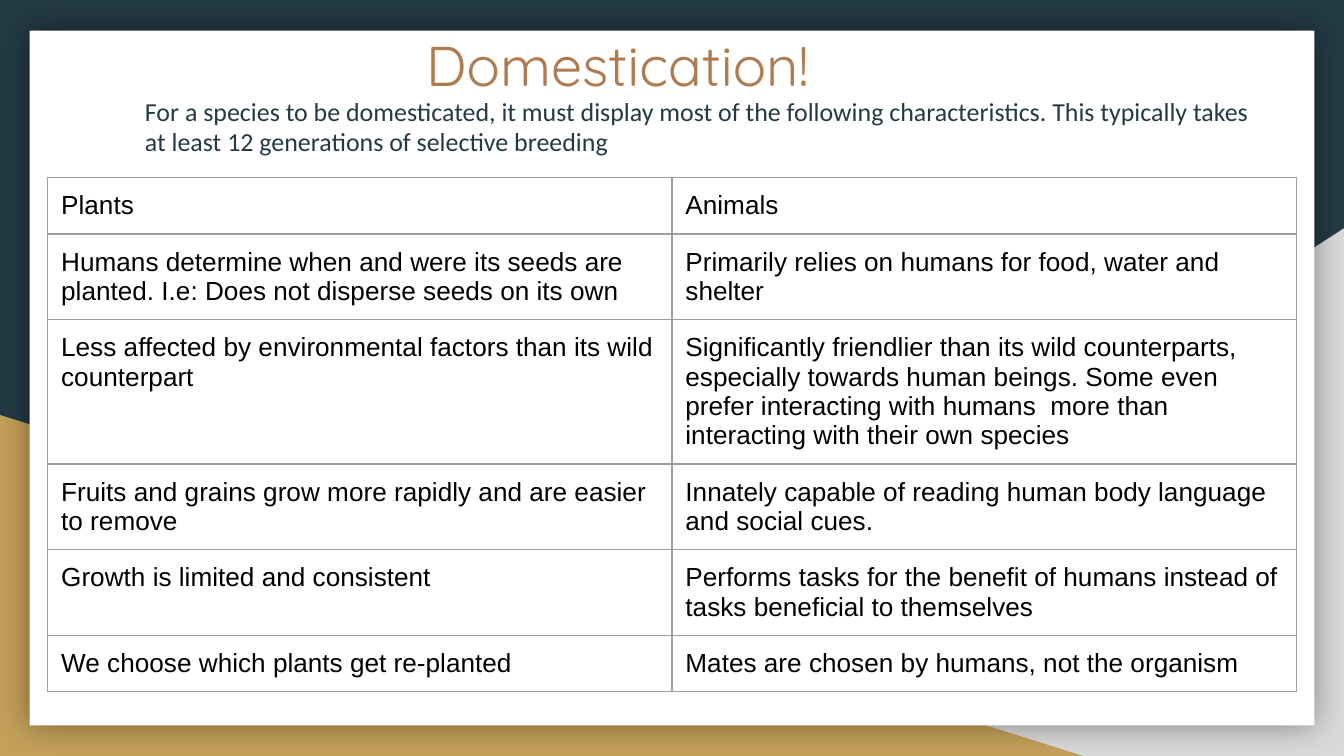
from dataclasses import dataclass

from lxml.etree import SubElement
from pptx import Presentation
from pptx.dml.color import RGBColor
from pptx.enum.shapes import MSO_SHAPE
from pptx.enum.text import MSO_ANCHOR, MSO_AUTO_SIZE, PP_ALIGN
from pptx.oxml.ns import qn
from pptx.util import Inches, Pt

COLORS = {
    "navy": "233A44",
    "gray": "D9D9D9",
    "gold": "C4A15A",
    "white": "FFFFFF",
    "copper": "AF7B51",
    "black": "000000",
    "border": "9E9E9E",
}
SLIDE_WIDTH, SLIDE_HEIGHT = Inches(10), Inches(5.625)
INSET = Inches(0.1)
LINE_HEIGHT = Inches(0.218)


@dataclass(frozen=True)
class Region:
    """Position and size in percent of the slide's width and height."""
    left: float
    top: float
    width: float
    height: float

    def lengths(self) -> tuple[int, int, int, int]:
        return (
            int(SLIDE_WIDTH * self.left / 100),
            int(SLIDE_HEIGHT * self.top / 100),
            int(SLIDE_WIDTH * self.width / 100),
            int(SLIDE_HEIGHT * self.height / 100),
        )


@dataclass(frozen=True)
class Panel:
    kind: MSO_SHAPE
    region: Region
    color: str
    flipped: bool = False
    shadowed: bool = False


@dataclass(frozen=True)
class TextStyle:
    font: str
    size: float
    color: str


@dataclass(frozen=True)
class TraitRow:
    plants: str
    animals: str
    lines: int


PANELS = [
    Panel(MSO_SHAPE.RIGHT_TRIANGLE, Region(39.2, 30.2, 60.8, 69.8), "gray", flipped=True),
    Panel(MSO_SHAPE.RIGHT_TRIANGLE, Region(0, 54.9, 80.6, 45.1), "gold"),
    Panel(MSO_SHAPE.RECTANGLE, Region(2.2, 4.05, 95.6, 91.9), "white", shadowed=True),
]
TITLE_REGION = Region(30.7, 2.3, 82.1, 18.5)
INTRO_REGION = Region(9.8, 11.2, 85.1, 14.76)
TABLE_REGION = Region(3.55, 23.5, 92.9, 68)

TITLE_STYLE = TextStyle("Quicksand", 30, "copper")
INTRO_STYLE = TextStyle("Calibri", 13.9, "navy")
CELL_STYLE = TextStyle("Arial", 14, "black")

INTRO = (
    "For a species to be domesticated, it must display most of the following "
    "characteristics. This typically takes at least 12 generations of selective breeding"
)
TRAITS = [
    TraitRow("Plants", "Animals", 1),
    TraitRow(
        "Humans determine when and were its seeds are planted. "
        "I.e: Does not disperse seeds on its own",
        "Primarily relies on humans for food, water and shelter", 2),
    TraitRow(
        "Less affected by environmental factors than its wild counterpart",
        "Significantly friendlier than its wild counterparts, especially towards human "
        "beings. Some even prefer interacting with humans  more than interacting with "
        "their own species", 4),
    TraitRow(
        "Fruits and grains grow more rapidly and are easier to remove",
        "Innately capable of reading human body language and social cues.", 2),
    TraitRow(
        "Growth is limited and consistent",
        "Performs tasks for the benefit of humans instead of tasks beneficial to themselves", 2),
    TraitRow(
        "We choose which plants get re-planted",
        "Mates are chosen by humans, not the organism", 1),
]


def rgb(name: str) -> RGBColor:
    return RGBColor.from_string(COLORS[name])


def add_span(para, text: str, style: TextStyle) -> None:
    span = para.add_run()
    span.text = text
    span.font.name = style.font
    span.font.size = Pt(style.size)
    span.font.color.rgb = rgb(style.color)


def set_insets(holder) -> None:
    """Give a text frame or table cell the same margin on all sides."""
    holder.margin_left = holder.margin_right = INSET
    holder.margin_top = holder.margin_bottom = INSET


def fill_box(box, text: str, style: TextStyle):
    frame = box.text_frame
    frame.word_wrap = True
    frame.auto_size = MSO_AUTO_SIZE.NONE
    frame.vertical_anchor = MSO_ANCHOR.TOP
    set_insets(frame)
    para = frame.paragraphs[0]
    para.alignment = PP_ALIGN.LEFT
    add_span(para, text, style)
    return para


def add_glow_shadow(shape) -> None:
    """Add a soft shadow that spreads evenly around the shape."""
    effects = shape._element.spPr.find(qn("a:effectLst"))
    shadow = SubElement(effects, qn("a:outerShdw"), blurRad=str(Pt(18)), dist="0",
                        dir="0", algn="ctr", rotWithShape="0")
    color = SubElement(shadow, qn("a:srgbClr"), val=COLORS["black"])
    SubElement(color, qn("a:alpha"), val="40000")


def add_panel(page, panel: Panel) -> None:
    shape = page.shapes.add_shape(panel.kind, *panel.region.lengths())
    shape.fill.solid()
    shape.fill.fore_color.rgb = rgb(panel.color)
    shape.line.fill.background()
    shape.shadow.inherit = False
    if panel.flipped:
        shape._element.spPr.find(qn("a:xfrm")).set("flipH", "1")
    if panel.shadowed:
        add_glow_shadow(shape)


def place_title(page) -> None:
    title = page.shapes.title
    title.left, title.top, title.width, title.height = TITLE_REGION.lengths()
    fill_box(title, "Domestication!", TITLE_STYLE)
    page.shapes._spTree.append(title._element)  # in front of the panels


def add_intro(page) -> None:
    box = page.shapes.add_textbox(*INTRO_REGION.lengths())
    para = fill_box(box, INTRO, INTRO_STYLE)
    para.line_spacing = 0.95
    para.space_after = Pt(12)


def format_cell(cell, text: str) -> None:
    set_insets(cell)
    add_span(cell.text_frame.paragraphs[0], text, CELL_STYLE)
    properties = cell._tc.get_or_add_tcPr()
    for side in ("lnL", "lnR", "lnT", "lnB"):
        border = SubElement(properties, qn(f"a:{side}"), w=str(Pt(0.75)))
        fill = SubElement(border, qn("a:solidFill"))
        SubElement(fill, qn("a:srgbClr"), val=COLORS["border"])
    cell.fill.background()


def add_traits_table(page) -> None:
    table = page.shapes.add_table(len(TRAITS), 2, *TABLE_REGION.lengths()).table
    table.first_row = table.horz_banding = False
    for row, trait in zip(table.rows, TRAITS):
        row.height = 2 * INSET + trait.lines * LINE_HEIGHT
        for cell, text in zip(row.cells, (trait.plants, trait.animals)):
            format_cell(cell, text)


def main() -> None:
    deck = Presentation()
    deck.slide_width, deck.slide_height = SLIDE_WIDTH, SLIDE_HEIGHT
    page = deck.slides.add_slide(deck.slide_layouts[5])
    page.background.fill.solid()
    page.background.fill.fore_color.rgb = rgb("navy")
    for panel in PANELS:
        add_panel(page, panel)
    place_title(page)
    add_intro(page)
    add_traits_table(page)
    deck.save("out.pptx")


if __name__ == "__main__":
    main()
